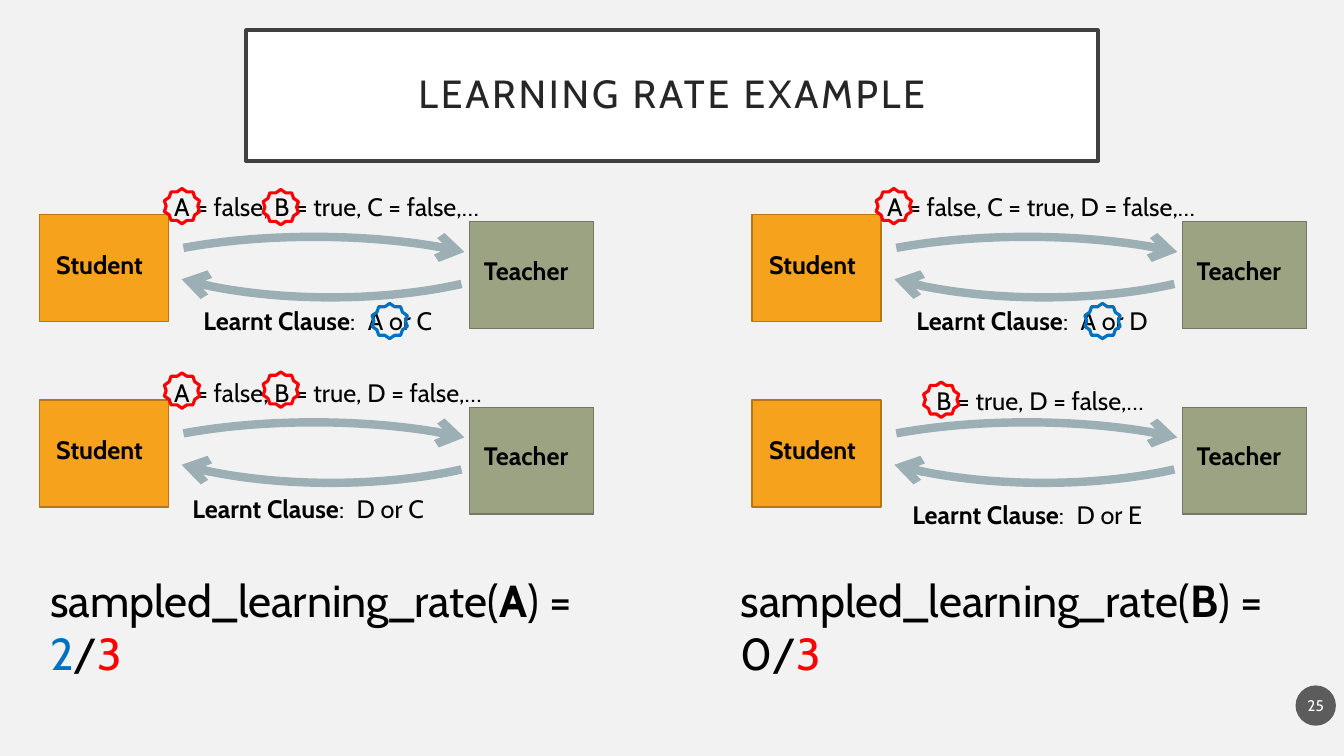
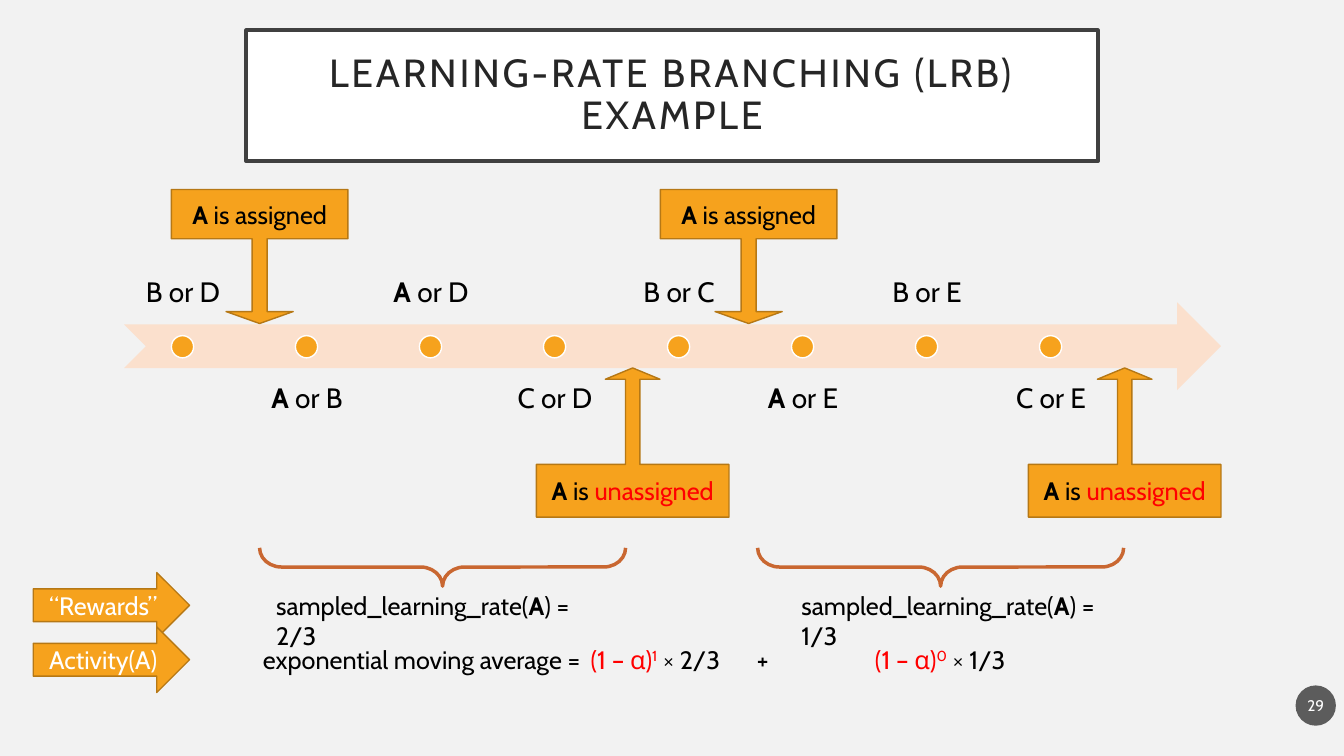
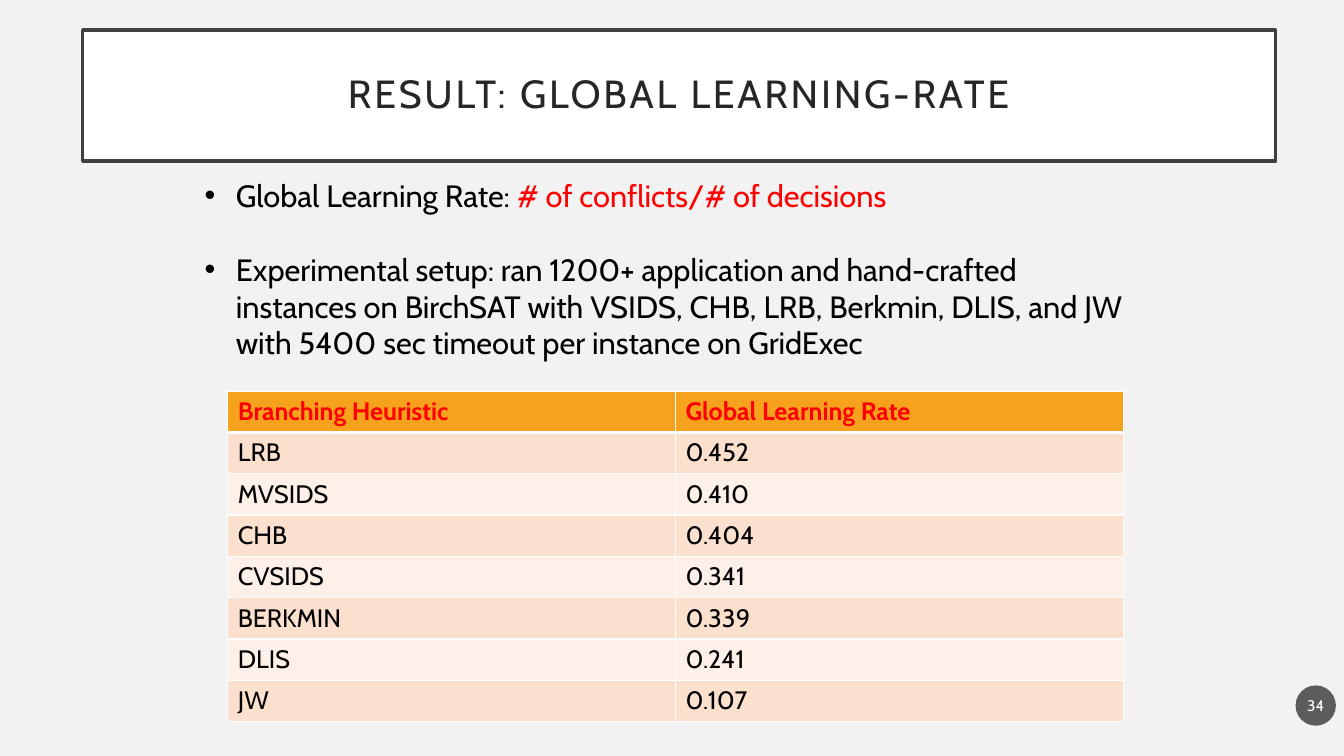
import dataclasses

import lxml.etree
import pptx
import pptx.dml.color
import pptx.enum.shapes
import pptx.enum.text
import pptx.oxml.ns
import pptx.util

Inches = pptx.util.Inches
Pt = pptx.util.Pt
qn = pptx.oxml.ns.qn
SHAPE = pptx.enum.shapes.MSO_SHAPE
ALIGN = pptx.enum.text.PP_ALIGN
ANCHOR = pptx.enum.text.MSO_ANCHOR


@dataclasses.dataclass(frozen=True)
class Theme:
    """Colours, font and type sizes of the whole deck."""
    font: str = "Cabin"
    background: str = "F2F2F2"
    black: str = "000000"
    white: str = "FFFFFF"
    red: str = "FF0000"
    blue: str = "0070C0"
    orange: str = "F6A21D"
    orange_edge: str = "B67815"
    green: str = "9CA383"
    green_edge: str = "737961"
    arrow: str = "9BAFB5"
    brace: str = "C96731"
    band_dark: str = "FBE0CD"
    band_light: str = "FDF0E8"
    title_text: str = "262626"
    title_edge: str = "404040"
    badge: str = "1D1D1D"
    title_size: int = 28
    formula_size: int = 32
    body_size: int = 22
    label_size: int = 20
    text_size: int = 18
    badge_size: int = 11


THEME = Theme()


@dataclasses.dataclass
class Run:
    """A stretch of text in one format."""
    text: str
    color: str = THEME.black
    bold: bool = False
    raised: bool = False


def rgb(color):
    return pptx.dml.color.RGBColor.from_string(color)


class Deck:
    """Holds the presentation, the style and the current slide."""

    def __init__(self, theme):
        self.theme = theme
        self.presentation = pptx.Presentation()
        self.presentation.slide_width = Inches(13.33)
        self.presentation.slide_height = Inches(7.5)
        background = self.presentation.slide_master.background.fill
        background.solid()
        background.fore_color.rgb = rgb(theme.background)
        self.slide = None

    def new_slide(self, title, number, layout=5, left=2.44, width=8.45):
        """Start a slide with its framed title and number badge."""
        theme = self.theme
        self.slide = self.presentation.slides.add_slide(
            self.presentation.slide_layouts[layout])
        shape = self.slide.shapes.title
        self.place(shape, left, 0.3, width, 1.3)
        self.paint(shape, theme.white, theme.title_edge, 2.5)
        self.frame(shape, ANCHOR.MIDDLE, 0.2, 0.2)
        paragraph = shape.text_frame.paragraphs[0]
        self.add_runs(paragraph, [Run(title, theme.title_text)],
                      theme.title_size, ALIGN.CENTER, 0.9)
        paragraph.runs[0]._r.get_or_add_rPr().set("spc", "200")

        badge = self.shape(SHAPE.OVAL, 12.85, 6.8, 0.4, 0.4, theme.badge,
                           runs=[Run(str(number), theme.white)],
                           size=theme.badge_size)
        self.frame(badge, ANCHOR.MIDDLE, 0.02, 0.05)
        color = badge._element.spPr.find(".//" + qn("a:srgbClr"))
        lxml.etree.SubElement(color, qn("a:alpha"), val="70000")

    def place(self, shape, left, top, width, height):
        shape.left, shape.top = Inches(left), Inches(top)
        shape.width, shape.height = Inches(width), Inches(height)

    def paint(self, shape, fill=None, line=None, weight=1):
        if fill:
            shape.fill.solid()
            shape.fill.fore_color.rgb = rgb(fill)
        else:
            shape.fill.background()
        if line:
            shape.line.color.rgb = rgb(line)
            shape.line.width = Pt(weight)
        else:
            shape.line.fill.background()

    def frame(self, shape, anchor, side=0.1, edge=0.05):
        frame = shape.text_frame
        frame.word_wrap = True
        frame.auto_size = pptx.enum.text.MSO_AUTO_SIZE.NONE
        frame.vertical_anchor = anchor
        frame.margin_left = frame.margin_right = Inches(side)
        frame.margin_top = frame.margin_bottom = Inches(edge)

    def add_runs(self, paragraph, runs, size, align=ALIGN.LEFT, spacing=1.0):
        paragraph.alignment = align
        paragraph.line_spacing = spacing
        for part in runs:
            run = paragraph.add_run()
            run.text = part.text
            run.font.name = self.theme.font
            run.font.size = Pt(size)
            run.font.bold = part.bold
            run.font.color.rgb = rgb(part.color)
            if part.raised:
                run._r.get_or_add_rPr().set("baseline", "30000")

    def shape(self, kind, left, top, width, height, fill=None, line=None,
              weight=1, adjustments=(), rotation=0, runs=(), size=None):
        shape = self.slide.shapes.add_shape(
            kind, Inches(left), Inches(top), Inches(width), Inches(height))
        shape.shadow.inherit = False
        shape.rotation = rotation
        for index, value in enumerate(adjustments):
            shape.adjustments[index] = value
        self.paint(shape, fill, line, weight)
        if runs:
            self.frame(shape, ANCHOR.MIDDLE)
            self.add_runs(shape.text_frame.paragraphs[0], runs,
                          size or self.theme.text_size, ALIGN.CENTER)
        return shape

    def text(self, left, top, width, height, runs, size=None, tabs=()):
        box = self.slide.shapes.add_textbox(
            Inches(left), Inches(top), Inches(width), Inches(height))
        self.frame(box, ANCHOR.TOP)
        paragraph = box.text_frame.paragraphs[0]
        self.add_runs(paragraph, runs, size or self.theme.text_size)
        if tabs:
            stops = lxml.etree.SubElement(
                paragraph._p.get_or_add_pPr(), qn("a:tabLst"))
            for stop in tabs:
                lxml.etree.SubElement(stops, qn("a:tab"),
                                      pos=str(Inches(stop)), algn="l")

    def label(self, left, top, anchor, runs):
        """Centred caption beside the timeline."""
        box = self.slide.shapes.add_textbox(
            Inches(left), Inches(top), Inches(1.17), Inches(0.87))
        self.frame(box, anchor, 0.16, 0.16)
        self.add_runs(box.text_frame.paragraphs[0], runs,
                      self.theme.label_size, ALIGN.CENTER, 0.9)

    def arc_arrow(self, left, top, width, height, rotation=0):
        arc = self.shape(SHAPE.ARC, left, top, width, height,
                         line=self.theme.arrow, weight=6,
                         adjustments=(123.468, 203.152), rotation=rotation)
        line = arc._element.spPr.find(qn("a:ln"))
        lxml.etree.SubElement(line, qn("a:tailEnd"), type="arrow")

    def star(self, left, top, color):
        self.shape(SHAPE.STAR_10_POINT, left, top, 0.35, 0.35,
                   line=color, weight=2.25)

    def bullets(self, left, top, width, height, items, gap):
        body = self.slide.placeholders[1]
        self.place(body, left, top, width, height)
        self.frame(body, ANCHOR.TOP)
        for index, runs in enumerate(items):
            paragraph = (body.text_frame.add_paragraph() if index
                         else body.text_frame.paragraphs[0])
            self.add_runs(paragraph, runs, self.theme.body_size)
            paragraph.space_before = Pt(gap if index else 0)
            paragraph.space_after = Pt(0)
            properties = paragraph._p.get_or_add_pPr()
            properties.set("marL", str(Inches(0.31)))
            properties.set("indent", str(-Inches(0.31)))
            lxml.etree.SubElement(properties, qn("a:buFont"), typeface="Arial")
            lxml.etree.SubElement(properties, qn("a:buChar"), char="•")

    def border(self, cell, side, weight):
        line = lxml.etree.SubElement(cell._tc.get_or_add_tcPr(),
                                     qn("a:ln" + side), w=str(Pt(weight)))
        fill = lxml.etree.SubElement(line, qn("a:solidFill"))
        lxml.etree.SubElement(fill, qn("a:srgbClr"), val=self.theme.white)

    def table(self, left, top, column_width, row_height, rows):
        theme = self.theme
        columns = len(rows[0])
        table = self.slide.shapes.add_table(
            len(rows), columns, Inches(left), Inches(top),
            Inches(column_width * columns),
            Inches(row_height * len(rows))).table
        table.horz_banding = False
        for column in table.columns:
            column.width = Inches(column_width)
        for row_index, values in enumerate(rows):
            table.rows[row_index].height = Inches(row_height)
            header = row_index == 0
            band = theme.band_dark if row_index % 2 else theme.band_light
            for column_index, value in enumerate(values):
                cell = table.cell(row_index, column_index)
                for side in "LRTB":
                    heavy = (side, row_index) in (("B", 0), ("T", 1))
                    self.border(cell, side, 3 if heavy else 1)
                cell.fill.solid()
                cell.fill.fore_color.rgb = rgb(theme.orange if header else band)
                color = theme.red if header else theme.black
                self.add_runs(cell.text_frame.paragraphs[0],
                              [Run(value, color, header)], theme.text_size)


def rate(variable, *result):
    """Runs of a sampled learning rate formula."""
    return [Run("sampled_learning_rate("), Run(variable, bold=True),
            Run(") = "), *result]


def clause(text):
    """Runs of a clause, with variable A in bold."""
    if text.startswith("A"):
        return [Run("A", bold=True), Run(text[1:])]
    return [Run(text)]


def dialogue(deck, left, top, assignment, assignment_at, learnt, learnt_at):
    """Student and teacher exchanging an assignment and a clause."""
    theme = deck.theme
    deck.shape(SHAPE.RECTANGLE, left, top, 1.28, 1.06,
               theme.orange, theme.orange_edge)
    deck.text(left + 0.07, top + 0.29, 1.14, 0.4, [Run("Student", bold=True)])
    deck.shape(SHAPE.RECTANGLE, left + 4.27, top + 0.07, 1.23, 1.06,
               theme.green, theme.green_edge)
    deck.text(left + 4.31, top + 0.35, 1.14, 0.4, [Run("Teacher", bold=True)])
    deck.text(*assignment_at, 3.44, 0.4, [Run(assignment)])
    deck.text(*learnt_at, 2.77, 0.4,
              [Run("Learnt Clause", bold=True), Run(":\t" + learnt)],
              tabs=[1.63])
    deck.arc_arrow(left + 0.26, top + 0.22, 4.93, 1.47)
    deck.arc_arrow(left + 0.6, top - 0.7, 4.58, 1.52, rotation=180)


def build_example(deck):
    theme = deck.theme
    deck.new_slide("LEARNING RATE EXAMPLE", 25)

    # Four rounds of the dialogue
    for round_ in (
            (0.39, 2.13, "A = false, B = true, C = false,…", (1.63, 1.85),
             "A or C", (1.92, 2.98)),
            (7.46, 2.13, "A = false, C = true, D = false,…", (8.7, 1.85),
             "A or D", (8.99, 2.98)),
            (0.39, 3.97, "A = false, B = true, D = false,…", (1.63, 3.69),
             "D or C", (1.81, 4.84)),
            (7.46, 3.97, "B = true, D = false,…", (9.19, 3.77),
             "D or E", (8.95, 4.9))):
        dialogue(deck, *round_)

    # Marks on assigned and learnt variables
    for left, top in ((1.63, 1.87), (2.61, 1.88), (8.69, 1.87),
                      (1.63, 3.7), (2.61, 3.69), (9.16, 3.79)):
        deck.star(left, top, theme.red)
    for left in (3.69, 10.76):
        deck.star(left, 3.01, theme.blue)

    # Resulting rates
    three = Run("3", theme.red)
    deck.text(0.4, 5.63, 6.06, 0.64,
              rate("A", Run("2", theme.blue), Run("/"), three),
              theme.formula_size)
    deck.text(7.25, 5.63, 6.02, 0.64, rate("B", Run("0/"), three),
              theme.formula_size)


def build_branching(deck):
    theme = deck.theme
    deck.new_slide("LEARNING-RATE BRANCHING (LRB) EXAMPLE", 29)

    # Timeline with clauses alternating above and below
    deck.shape(SHAPE.NOTCHED_RIGHT_ARROW, 1.23, 3, 10.88, 0.87,
               theme.band_dark)
    clauses = ("B or D", "A or B", "A or D", "C or D",
               "B or C", "A or E", "B or E", "C or E")
    for index, text in enumerate(clauses):
        offset = 1.23 * index
        top, anchor = ((3.65, ANCHOR.TOP) if index % 2
                       else (2.35, ANCHOR.BOTTOM))
        deck.label(1.23 + offset, top, anchor, clause(text))
        deck.shape(SHAPE.OVAL, 1.7 + offset, 3.33, 0.22, 0.22,
                   theme.orange, theme.white)

    # Two spans: assigned, unassigned, brace and rate
    for assigned, unassigned, brace, rate_left, value in (
            (1.7, 5.32, 4.2, 2.64, "2/3"), (6.55, 10.2, 9.14, 7.85, "1/3")):
        deck.shape(SHAPE.DOWN_ARROW_CALLOUT, assigned, 1.88, 1.75, 1.33,
                   theme.orange, theme.orange_edge,
                   adjustments=(0.112, 0.25, 0.089, 0.368),
                   runs=clause("A is assigned"))
        deck.shape(SHAPE.UP_ARROW_CALLOUT, unassigned, 3.65, 1.91, 1.48,
                   theme.orange, theme.orange_edge,
                   adjustments=(0.096, 0.183, 0.076, 0.353),
                   runs=clause("A is ") + [Run("unassigned", theme.red)])
        deck.shape(SHAPE.LEFT_BRACE, brace, 3.81, 0.38, 3.63,
                   line=theme.brace, weight=2.5,
                   adjustments=(0.572, 0.5), rotation=270)
        deck.text(rate_left, 5.81, 3.49, 0.4, rate("A", Run(value)))

    # Moving average
    factor = Run("(1 – α)", theme.red)
    deck.text(2.51, 6.34, 8.07, 0.4,
              [Run("exponential moving average =\t"),
               factor, Run("1", theme.red, raised=True), Run(" × 2/3\t+\t"),
               factor, Run("0", theme.red, raised=True), Run(" × 1/3")],
              tabs=[3.25, 4.9, 6.07])

    # Row names
    for top, name in ((5.68, "“Rewards”"), (6.22, "Activity(A)")):
        deck.shape(SHAPE.RIGHT_ARROW, 0.33, top, 1.55, 0.65,
                   theme.orange, theme.orange_edge,
                   runs=[Run(name, theme.white)])


def build_result(deck):
    deck.new_slide("RESULT: GLOBAL LEARNING-RATE", 34, layout=1,
                   left=0.82, width=11.83)
    deck.bullets(1.93, 1.7, 9.5, 2.32, [
        [Run("Global Learning Rate: "),
         Run("# of conflicts/# of decisions", deck.theme.red)],
        [Run("Experimental setup: ran 1200+ application and hand-crafted "
             "instances on BirchSAT with VSIDS, CHB, LRB, Berkmin, DLIS, "
             "and JW with 5400 sec timeout per instance on GridExec")],
    ], gap=26.4)
    deck.table(2.26, 3.88, 4.44, 0.41, [
        ("Branching Heuristic", "Global Learning Rate"),
        ("LRB", "0.452"),
        ("MVSIDS", "0.410"),
        ("CHB", "0.404"),
        ("CVSIDS", "0.341"),
        ("BERKMIN", "0.339"),
        ("DLIS", "0.241"),
        ("JW", "0.107"),
    ])


def main():
    deck = Deck(THEME)
    build_example(deck)
    build_branching(deck)
    build_result(deck)
    deck.presentation.save("out.pptx")


if __name__ == "__main__":
    main()
